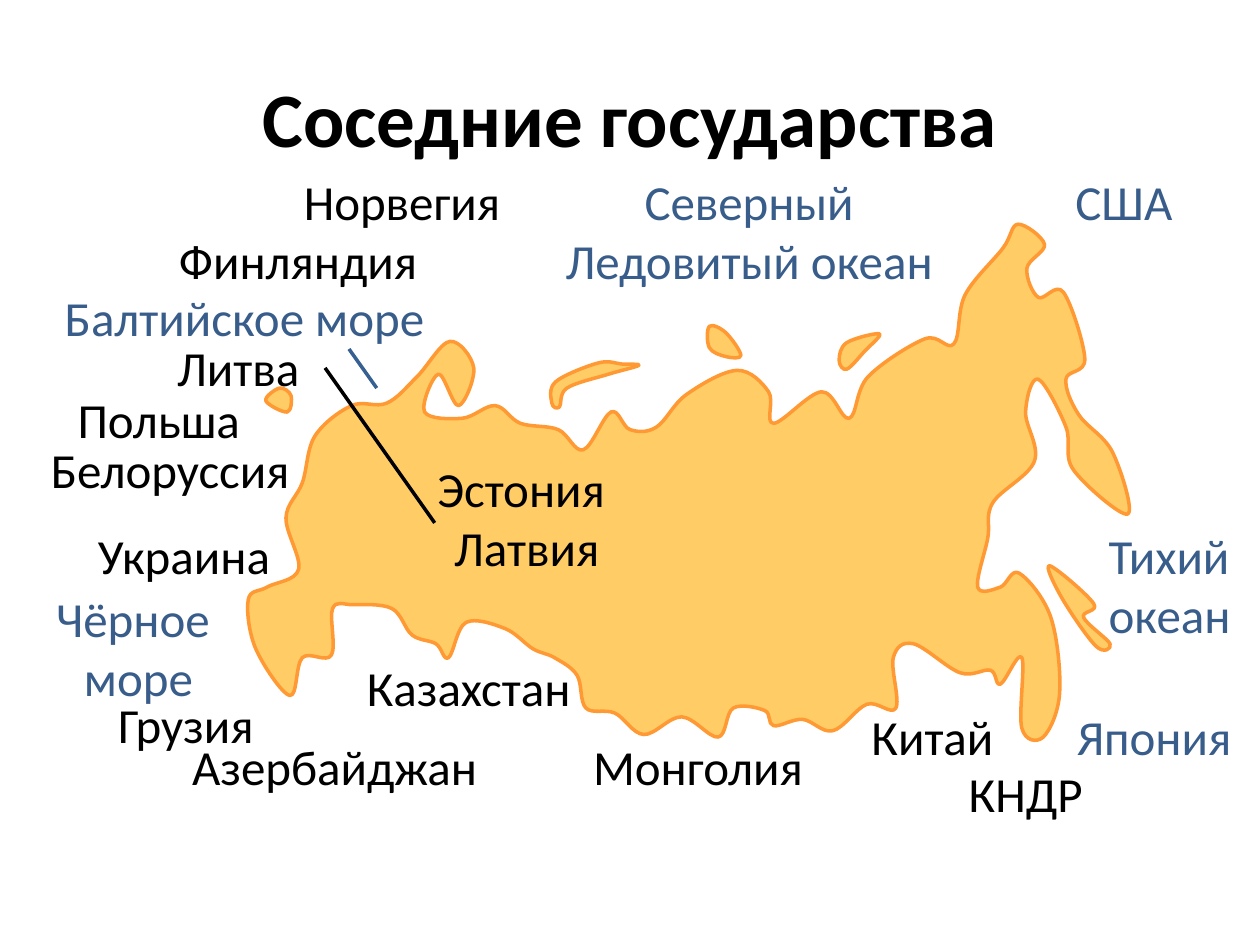
from typing import NamedTuple

from lxml import etree
from pptx import Presentation
from pptx.dml.color import RGBColor
from pptx.enum.shapes import MSO_CONNECTOR as Connector
from pptx.enum.text import MSO_ANCHOR as Anchor, MSO_AUTO_SIZE as AutoSize, PP_ALIGN as Align
from pptx.oxml.ns import qn
from pptx.util import Inches, Pt

COLORS = {
    "land": "FFCC66",
    "border": "FF9933",
    "country": "000000",
    "water": "385D8A",
    "sea_line": "376092",
}
FONT = "Calibri"

Point = tuple[float, float]


class Label(NamedTuple):
    lines: tuple[str, ...]
    left: float
    top: float
    width: float
    height: float = 0.57
    color: str = "country"
    size: int = 28
    bold: bool = False
    align: Align = Align.CENTER
    anchor: Anchor = Anchor.TOP
    wrap: bool = False


class Pointer(NamedTuple):
    start: Point
    end: Point
    color: str


KALININGRAD = [(2.22, 3.08), (2.11, 3.18), (2.28, 3.27), (2.31, 3.14)]
MAINLAND = [
    (3.56, 5.22), (3.70, 4.94), (4.01, 4.99), (4.23, 5.15), (4.40, 5.22), (4.58, 5.36),
    (4.65, 5.62), (4.88, 5.66), (5.11, 5.83), (5.41, 5.69), (5.70, 5.85), (5.82, 5.62),
    (6.07, 5.64), (6.14, 5.76), (6.37, 5.71), (6.61, 5.80), (6.88, 5.59), (7.11, 5.62),
    (7.09, 5.22), (7.25, 5.11), (7.62, 5.34), (7.86, 5.32), (7.94, 5.43), (8.11, 5.22),
    (8.11, 5.78), (8.28, 5.85), (8.41, 5.50), (8.34, 4.90), (8.09, 4.55), (7.94, 4.66),
    (7.76, 4.66), (7.84, 4.27), (7.88, 3.99), (8.21, 3.66), (8.14, 3.27), (8.24, 3.01),
    (8.46, 3.39), (8.52, 3.73), (8.95, 4.08), (8.83, 3.59), (8.56, 3.29), (8.46, 3.01),
    (8.61, 2.85), (8.44, 2.32), (8.24, 2.36), (8.15, 2.13), (8.29, 1.94), (8.08, 1.78),
    (7.96, 1.97), (7.66, 2.34), (7.57, 2.73), (7.34, 2.69), (6.89, 2.99), (6.74, 3.32),
    (6.52, 3.11), (6.14, 3.36), (6.10, 3.11), (5.85, 2.94), (5.45, 3.13), (5.21, 3.39),
    (5.00, 3.41), (4.85, 3.27), (4.63, 3.57), (4.43, 3.41), (4.13, 3.36), (3.93, 3.22),
    (3.67, 3.32), (3.37, 3.27), (3.48, 2.97), (3.64, 3.22), (3.76, 2.92), (3.57, 2.71),
    (3.31, 2.99), (3.07, 3.20), (2.79, 3.22), (2.50, 3.46), (2.40, 3.83), (2.27, 4.11),
    (2.37, 4.52), (2.12, 4.66), (1.97, 4.76), (2.03, 5.15), (2.30, 5.52), (2.40, 5.22),
    (2.63, 5.20), (2.64, 4.83), (2.80, 4.80), (3.11, 4.83), (3.27, 5.04), (3.46, 5.11),
]
NOVAYA_ZEMLYA = [
    (4.44, 3.23), (4.50, 3.08), (4.83, 2.97), (5.07, 2.90),
    (4.94, 2.89), (4.75, 2.88), (4.41, 3.03), (4.38, 3.20),
]
SEVERNAYA_ZEMLYA = [(5.76, 2.83), (5.88, 2.82), (5.76, 2.64), (5.63, 2.59), (5.63, 2.76)]
SAKHALIN = [(8.81, 5.11), (8.60, 4.90), (8.68, 4.79), (8.33, 4.49), (8.43, 4.75), (8.70, 5.13)]
NEW_SIBERIAN_ISLANDS = [(6.72, 2.93), (6.86, 2.79), (6.98, 2.65), (6.72, 2.72), (6.66, 2.86)]
TERRITORIES = [
    KALININGRAD, MAINLAND, NOVAYA_ZEMLYA, SEVERNAYA_ZEMLYA, SAKHALIN, NEW_SIBERIAN_ISLANDS,
]

POINTERS = [
    Pointer((2.58, 2.92), (3.45, 4.15), "country"),
    Pointer((2.77, 2.77), (2.99, 3.08), "sea_line"),
]

LABELS = [
    Label(("Соседние государства",), 0.5, 0.3, 9, 1.25,
          size=44, bold=True, anchor=Anchor.MIDDLE, wrap=True),
    Label(("Норвегия",), 2.3, 1.31, 1.78),
    Label(("Финляндия",), 1.31, 1.78, 2.11),
    Label(("Польша",), 0.51, 3.04, 1.5),
    Label(("Литва",), 1.3, 2.63, 1.18),
    Label(("Белоруссия",), 0.29, 3.44, 2.12),
    Label(("Украина",), 0.67, 4.12, 1.58),
    Label(("Грузия",), 0.83, 5.46, 1.29),
    Label(("Азербайджан",), 1.41, 5.8, 2.49),
    Label(("Казахстан",), 2.8, 5.17, 1.84),
    Label(("Монголия",), 4.56, 5.8, 1.96),
    Label(("Китай",), 6.81, 5.56, 1.18),
    Label(("КНДР",), 7.58, 6.01, 1.12),
    Label(("Эстония ", "Латвия"), 3.36, 3.59, 1.64, 1.04),
    Label(("США",), 8.43, 1.31, 0.98, color="water"),
    Label(("Япония",), 8.44, 5.56, 1.44, color="water"),
    Label(("Тихий", "океан"), 8.7, 4.12, 1.18, 1.04, color="water", align=Align.LEFT),
    Label(("Северный", "Ледовитый океан"), 4.37, 1.31, 3.15, 1.04, color="water"),
    Label(("Чёрное", " море"), 0.34, 4.62, 1.43, 1.04, color="water"),
    Label(("Балтийское море",), 0.2, 2.23, 3.48, color="water", wrap=True),
]


def rgb(name: str) -> RGBColor:
    return RGBColor.from_string(COLORS[name])


def round_corners(territory, knots: list[Point]) -> None:
    """Turn the straight sides into Bézier curves that run smoothly through all knots."""
    contour = territory._element.find(".//" + qn("a:path"))
    for side in contour.findall(qn("a:lnTo")):
        contour.remove(side)
    closing = contour.find(qn("a:close"))
    origin = (territory.left, territory.top)
    for i, current in enumerate(knots):
        before, after, beyond = (knots[(i + k) % len(knots)] for k in (-1, 1, 2))
        leaving = [c + (a - b) / 6 for b, c, a in zip(before, current, after)]
        arriving = [a - (d - c) / 6 for c, a, d in zip(current, after, beyond)]
        curve = etree.SubElement(contour, qn("a:cubicBezTo"))
        for point in (leaving, arriving, after):
            x, y = (str(Inches(value) - start) for value, start in zip(point, origin))
            etree.SubElement(curve, qn("a:pt"), x=x, y=y)
    contour.append(closing)


def draw_territory(shapes, knots: list[Point]) -> None:
    start, *rest = [(Inches(x), Inches(y)) for x, y in knots]
    builder = shapes.build_freeform(*start)
    builder.add_line_segments(rest, close=True)
    territory = builder.convert_to_shape()
    round_corners(territory, knots)
    territory.shadow.inherit = False
    territory.fill.solid()
    territory.fill.fore_color.rgb = rgb("land")
    territory.line.color.rgb = rgb("border")
    territory.line.width = Pt(2)


def draw_pointer(shapes, pointer: Pointer) -> None:
    ends = [Inches(value) for value in pointer.start + pointer.end]
    line = shapes.add_connector(Connector.STRAIGHT, *ends)
    line.line.color.rgb = rgb(pointer.color)
    line.line.width = Pt(2)
    etree.SubElement(line._element.spPr, qn("a:effectLst"))


def draw_label(shapes, label: Label) -> None:
    box = shapes.add_textbox(*map(Inches, (label.left, label.top, label.width, label.height)))
    frame = box.text_frame
    frame.word_wrap = label.wrap
    frame.vertical_anchor = label.anchor
    if label.anchor == Anchor.TOP:
        frame.auto_size = AutoSize.SHAPE_TO_FIT_TEXT
    frame.text = "\n".join(label.lines)
    for paragraph in frame.paragraphs:
        paragraph.alignment = label.align
        paragraph.font.name = FONT
        paragraph.font.size = Pt(label.size)
        paragraph.font.bold = label.bold
        paragraph.font.color.rgb = rgb(label.color)


def main() -> None:
    deck = Presentation()
    deck.slide_width, deck.slide_height = Inches(10), Inches(7.5)
    shapes = deck.slides.add_slide(deck.slide_layouts[6]).shapes
    russia = shapes.add_group_shape()
    for knots in TERRITORIES:
        draw_territory(russia.shapes, knots)
    for pointer in POINTERS:
        draw_pointer(shapes, pointer)
    for label in LABELS:
        draw_label(shapes, label)
    deck.save("out.pptx")


if __name__ == "__main__":
    main()
